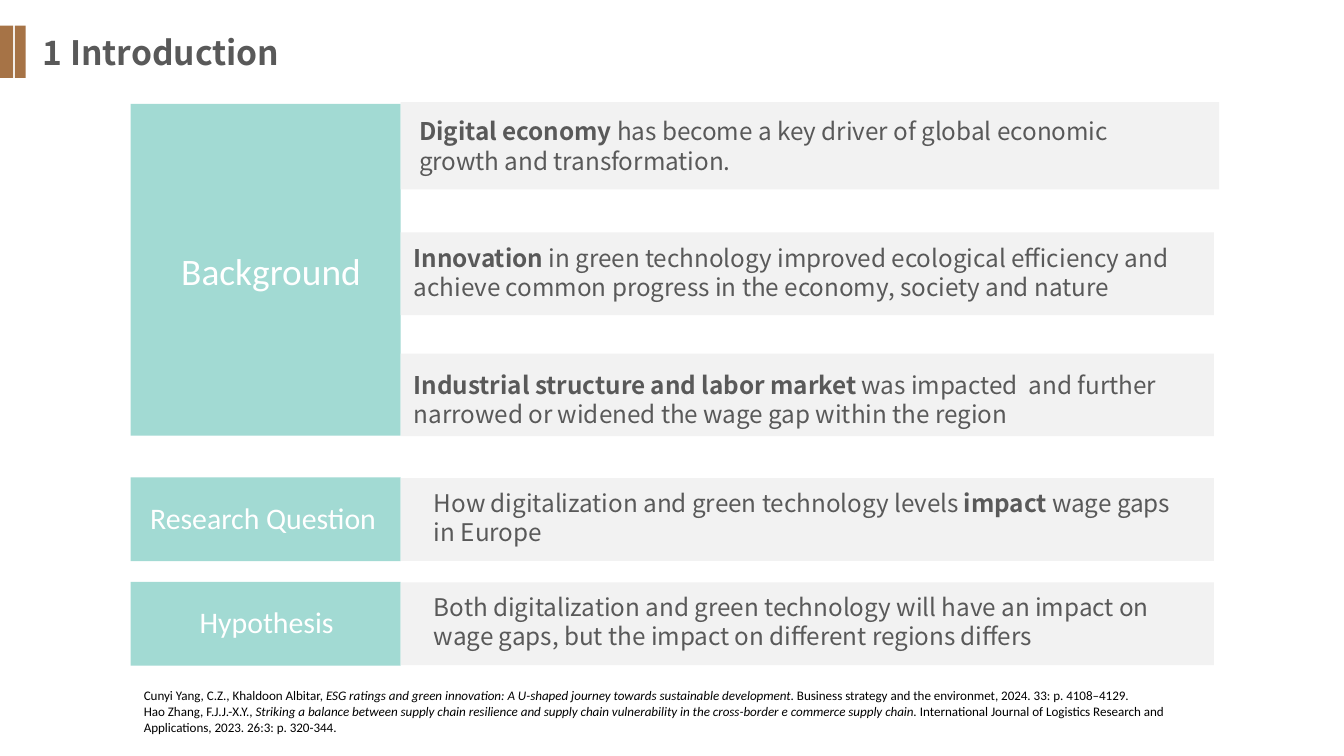
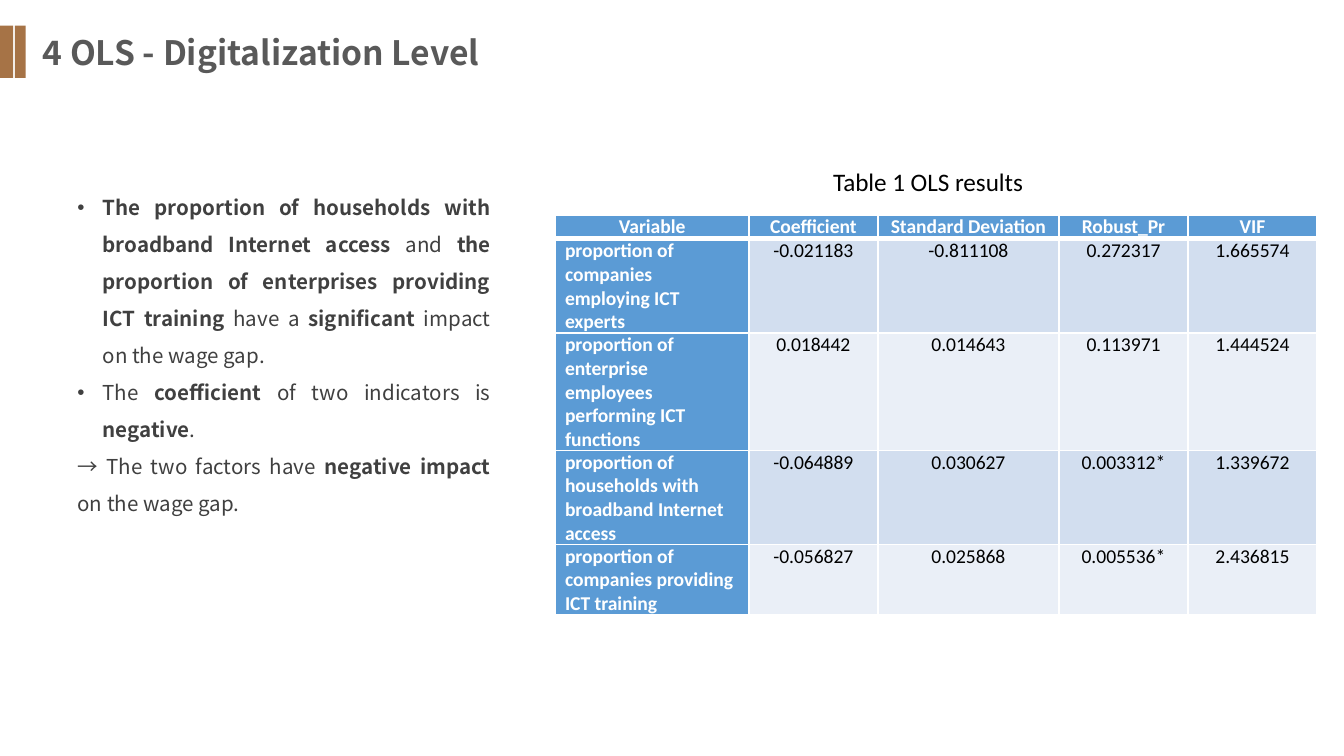
from lxml.etree import SubElement
from pptx import Presentation
from pptx.dml.color import RGBColor
from pptx.enum.shapes import MSO_SHAPE
from pptx.enum.text import MSO_AUTO_SIZE, PP_ALIGN
from pptx.oxml.ns import qn
from pptx.util import Pt

COLORS = {
    "bar": "A67346", "label": "A2DAD3", "panel": "F2F2F2", "white": "FFFFFF",
    "black": "000000", "title": "595959", "body": "404040",
    "header": "5B9BD5", "odd": "D2DEEF", "even": "EAEFF7",
}
SANS = "Noto Sans CJK SC"
PLAIN = "Calibri"


def add_block(page, left, top, width, height, color):
    block = page.shapes.add_shape(MSO_SHAPE.RECTANGLE, Pt(left), Pt(top), Pt(width), Pt(height))
    block.shadow.inherit = False
    block.fill.solid()
    block.fill.fore_color.rgb = RGBColor.from_string(COLORS[color])
    block.line.fill.background()


def add_text(page, left, top, width, height, lines, size, color, font=SANS, italic=False):
    """Add a text box; words between asterisks are bold, or italic if asked."""
    box = page.shapes.add_textbox(Pt(left), Pt(top), Pt(width), Pt(height))
    frame = box.text_frame
    frame.word_wrap = True
    frame.auto_size = MSO_AUTO_SIZE.SHAPE_TO_FIT_TEXT
    for index, line in enumerate(lines):
        para = frame.add_paragraph() if index else frame.paragraphs[0]
        for number, piece in enumerate(line.split("*")):
            if piece:
                span = para.add_run()
                span.text = piece
                span.font.name = font
                span.font.size = Pt(size)
                span.font.color.rgb = RGBColor.from_string(COLORS[color])
                span.font.bold = number % 2 == 1 and not italic
                span.font.italic = number % 2 == 1 and italic
    return frame.paragraphs


deck = Presentation()
deck.slide_width, deck.slide_height = Pt(720), Pt(405)

# Title with two side bars on every slide
pages = []
for title, title_width in [("1 Introduction", 178), ("4 OLS - Digitalization Level", 269)]:
    page = deck.slides.add_slide(deck.slide_layouts[6])
    add_text(page, 15.8, 13.7, title_width, 28.8, [f"*{title}*"], 18, "title")
    add_block(page, 0, 13.8, 7.1, 28, "bar")
    add_block(page, 8, 13.8, 5.8, 28, "bar")
    pages.append(page)
intro, results = pages

# Introduction: labels on the left, statements on the right
label_left, label_width = 70, 144.6
panel_left = label_left + label_width

labels = [
    # block top, block height, text left, text top, text width, text, size
    (55.7, 177.8, 90, 129.6, 118, "Background", 20),
    (255.7, 45, 73.4, 264.2, 139, "Research Question", 16),
    (311.7, 45, 73.4, 319.7, 139, "Hypothesis", 16),
]
for top, height, text_left, text_top, width, text, size in labels:
    add_block(intro, label_left, top, label_width, height, "label")
    paras = add_text(intro, text_left, text_top, width, size * 1.65, [text], size, "white", PLAIN)
    if text == "Hypothesis":
        paras[0].alignment = PP_ALIGN.CENTER

statements = [
    # panel top, panel height, panel width, text left, text top, text width, text
    (54.7, 46.8, 438.5, 217.4, 59, 428,
     "*Digital economy *has become a key driver of global economic growth and transformation."),
    (124.5, 44.3, 435.7, 214.6, 126.7, 432,
     "*Innovation* in green technology improved ecological efficiency and achieve common "
     "progress in the economy, society and nature"),
    (189.4, 44.3, 435.7, 214.6, 194.8, 452,
     "*Industrial structure and labor market *was impacted  and further narrowed or widened "
     "the wage gap within the region"),
    (256.2, 44.3, 435.7, 225.4, 257.8, 415,
     "How digitalization and green technology levels *impact* wage gaps in Europe"),
    (312, 44.3, 435.7, 225.4, 313.8, 415,
     "Both digitalization and green technology will have an impact on wage gaps, but the "
     "impact on different regions differs"),
]
for top, height, width, text_left, text_top, text_width, text in statements:
    add_block(intro, panel_left, top, width, height, "panel")
    add_text(intro, text_left, text_top, text_width, 39, [text], 13, "title")

add_text(intro, label_left, 365, 580.3, 32.4, [
    "Cunyi Yang, C.Z., Khaldoon Albitar, *ESG ratings and green innovation: A U-shaped journey "
    "towards sustainable development.* Business strategy and the environmet, 2024. 33: "
    "p. 4108–4129.",
    "Hao Zhang, F.J.J.-X.Y., *Striking a balance between supply chain resilience and supply "
    "chain vulnerability in the cross-border e commerce supply chain.* International Journal of "
    "Logistics Research and Applications, 2023. 26:3: p. 320-344.",
], 7, "black", PLAIN, italic=True)

# Results: findings on the left
findings = add_text(results, 34.4, 94.3, 235.6, 185, [
    "*The proportion of households with broadband Internet access *and *the proportion of "
    "enterprises providing ICT training* have a *significant *impact on the wage gap.",
    "The *coefficient* of two indicators is *negative*.",
    "→ The two factors have *negative impact *on the wage gap.",
], 11, "body")
for para in findings:
    para.alignment = PP_ALIGN.JUSTIFY
    para.line_spacing = 1.5
for para in findings[:2]:
    properties = para._p.get_or_add_pPr()
    properties.set("marL", str(Pt(13.5)))
    properties.set("indent", str(-Pt(13.5)))
    SubElement(properties, qn("a:buFont"), typeface="Arial")
    SubElement(properties, qn("a:buChar"), char="•")

# Results: regression table on the right
rows = [
    ("Variable", "Coefficient", "Standard Deviation", "Robust_Pr", "VIF"),
    ("proportion of companies employing ICT experts",
     "-0.021183", "-0.811108", "0.272317", "1.665574"),
    ("proportion of enterprise employees performing ICT functions",
     "0.018442", "0.014643", "0.113971", "1.444524"),
    ("proportion of households with broadband Internet access",
     "-0.064889", "0.030627", "0.003312*", "1.339672"),
    ("proportion of companies providing ICT training",
     "-0.056827", "0.025868", "0.005536*", "2.436815"),
]
column_widths = [103.6, 69.1, 97.1, 69.1, 69.1]
row_heights = [11.7, 35.2, 46.9, 46.9, 35.2]
table = results.shapes.add_table(len(rows), len(column_widths), Pt(297.6), Pt(115.4),
                                 Pt(sum(column_widths)), Pt(sum(row_heights))).table
for column, width in zip(table.columns, column_widths):
    column.width = Pt(width)
for row, height in zip(table.rows, row_heights):
    row.height = Pt(height)

for r, values in enumerate(rows):
    for c, value in enumerate(values):
        cell = table.cell(r, c)
        heading = r == 0 or c == 0
        cell.margin_left = cell.margin_right = Pt(5.1)
        cell.margin_top = cell.margin_bottom = 0
        cell.text = value
        para = cell.text_frame.paragraphs[0]
        para.alignment = PP_ALIGN.LEFT if c == 0 and r else PP_ALIGN.CENTER
        font = para.runs[0].font
        font.name, font.size, font.bold = PLAIN, Pt(10.5), heading
        font.color.rgb = RGBColor.from_string(COLORS["white" if heading else "black"])
        properties = cell._tc.get_or_add_tcPr()
        for side in ("lnL", "lnR", "lnT", "lnB"):
            thick = (r, side) in [(0, "lnB"), (1, "lnT")]
            border = SubElement(properties, qn(f"a:{side}"), w=str(Pt(3 if thick else 1)))
            SubElement(SubElement(border, qn("a:solidFill")), qn("a:srgbClr"), val=COLORS["white"])
        cell.fill.solid()
        shade = "header" if heading else "odd" if r % 2 else "even"
        cell.fill.fore_color.rgb = RGBColor.from_string(COLORS[shade])

add_text(results, 439.2, 85.7, 124, 23.8, ["Table 1 OLS results"], 13.5, "black", PLAIN)

deck.save("out.pptx")
